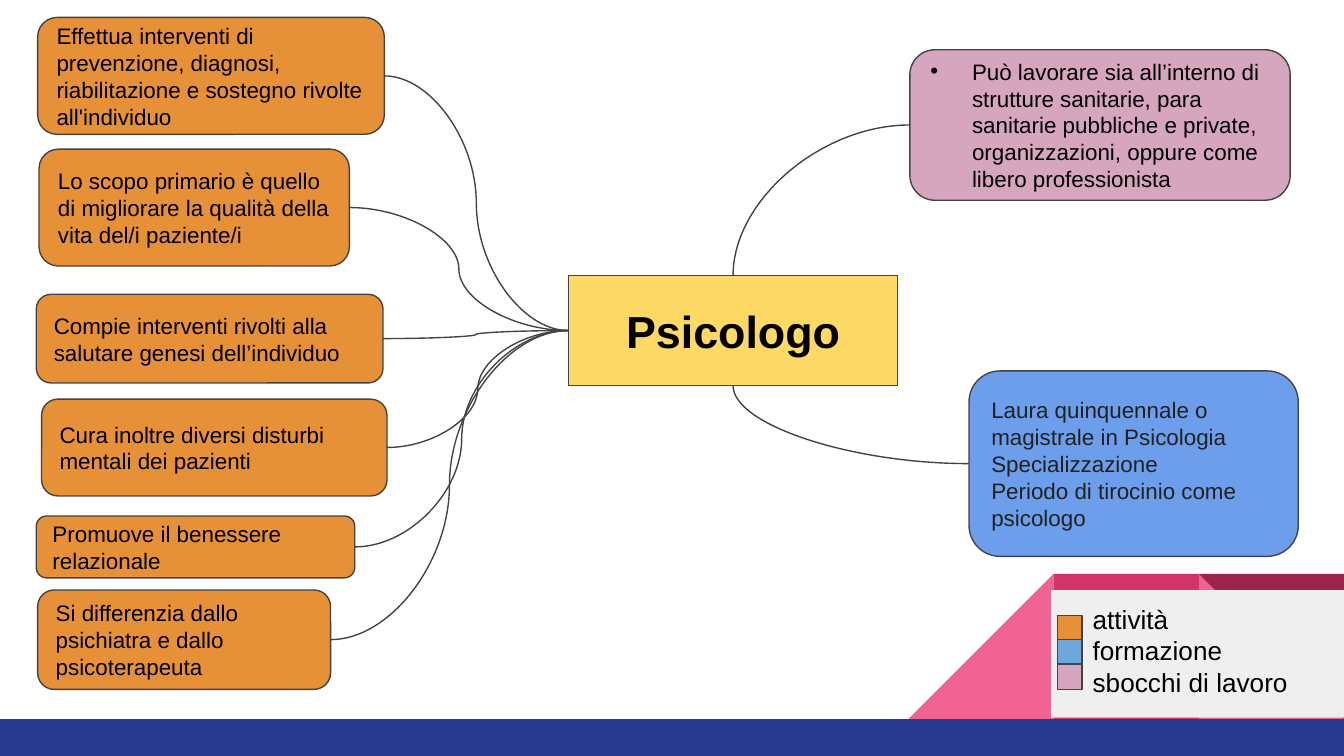
import pptx
import pptx.dml.color
import pptx.enum.shapes
import pptx.enum.text
import pptx.oxml
import pptx.oxml.ns
import pptx.util

Inches = pptx.util.Inches
Pt = pptx.util.Pt
SHAPE = pptx.enum.shapes.MSO_SHAPE
ANCHOR = pptx.enum.text.MSO_ANCHOR
ALIGN = pptx.enum.text.PP_ALIGN

COLORS = {
    "activity": "E69138",
    "outlets": "D5A6BD",
    "training": "6D9EEB",
    "training_key": "6FA8DC",
    "topic": "FFD966",
    "outline": "434343",
    "text": "000000",
    "soft_text": "212121",
    "legend": "EFEFEF",
    "footer": "2A3990",
    "pink": "F06292",
    "magenta": "D23369",
    "wine": "9C254D",
}
TOP, LEFT, BOTTOM, RIGHT = range(4)

ACTIVITIES = [
    ("Effettua interventi di prevenzione, diagnosi, riabilitazione e sostegno "
     "rivolte all'individuo", (0.28, 0.13, 2.58, 0.87)),
    ("Lo scopo primario è quello di migliorare la qualità della vita del/i paziente/i",
     (0.29, 1.11, 2.31, 0.87)),
    ("Compie interventi rivolti alla salutare genesi dell’individuo",
     (0.27, 2.19, 2.58, 0.66)),
    ("Cura inoltre diversi disturbi mentali dei pazienti", (0.31, 2.97, 2.57, 0.72)),
    ("Promuove il benessere relazionale", (0.27, 3.84, 2.37, 0.46)),
    ("Si differenzia dallo psichiatra e dallo psicoterapeuta", (0.28, 4.39, 2.18, 0.74)),
]
OUTLETS = ("Può lavorare sia all’interno di strutture sanitarie, para sanitarie "
           "pubbliche e private, organizzazioni, oppure come libero professionista")
TRAINING = ["Laura quinquennale o magistrale in Psicologia", "Specializzazione",
            "Periodo di tirocinio come psicologo"]
LEGEND = ["attività", "formazione", "sbocchi di lavoro"]


def rgb(name):
    return pptx.dml.color.RGBColor.from_string(COLORS[name])


def paint(shape, fill, outlined=True):
    shape.fill.solid()
    shape.fill.fore_color.rgb = rgb(fill)
    if outlined:
        shape.line.color.rgb = rgb("outline")
        shape.line.width = Pt(0.75)
    else:
        shape.line.fill.background()


def add_block(slide, kind, box, fill, outlined=True):
    block = slide.shapes.add_shape(kind, *map(Inches, box))
    block.shadow.inherit = False
    paint(block, fill, outlined)
    return block


def write(shape, lines, size=12, color="text", bold=False, align=ALIGN.LEFT,
          anchor=ANCHOR.MIDDLE):
    frame = shape.text_frame
    frame.word_wrap = True
    frame.auto_size = pptx.enum.text.MSO_AUTO_SIZE.NONE
    frame.vertical_anchor = anchor
    frame.margin_left = frame.margin_right = Inches(0.1)
    frame.margin_top = frame.margin_bottom = Inches(0.1)
    for number, line in enumerate(lines):
        paragraph = frame.add_paragraph() if number else frame.paragraphs[0]
        paragraph.alignment = align
        paragraph.space_before = Pt(0)
        run = paragraph.add_run()
        run.text = line
        run.font.name = "Arial"
        run.font.size = Pt(size)
        run.font.bold = bold
        run.font.color.rgb = rgb(color)


def set_list_style(paragraph, margin, indent, bullet=None):
    properties = paragraph._p.get_or_add_pPr()
    properties.set("marL", str(Inches(margin)))
    properties.set("indent", str(Inches(indent)))
    marks = ['buFont %s typeface="Arial"', f'buChar %s char="{bullet}"'] if bullet else ["buNone %s"]
    for mark in marks:
        properties.append(pptx.oxml.parse_xml(
            "<a:" + mark % pptx.oxml.ns.nsdecls("a") + "/>"))


def fill_placeholder(slide, placeholder, box, fill, outlined=True):
    """Place a placeholder in front of everything drawn so far."""
    placeholder.left, placeholder.top, placeholder.width, placeholder.height = map(Inches, box)
    paint(placeholder, fill, outlined)
    slide.shapes._spTree.append(placeholder._element)
    return placeholder


def add_card(slide, box, fill, lines, color="text"):
    card = add_block(slide, SHAPE.ROUNDED_RECTANGLE, box, fill)
    write(card, lines, color=color)
    return card


def add_curve(slide, start, start_site, end, end_site, quarter=False):
    """Join two shapes; a quarter curve leaves sideways and arrives vertically."""
    curve = slide.shapes.add_connector(
        pptx.enum.shapes.MSO_CONNECTOR.CURVE, 0, 0, 0, 0)
    curve.begin_connect(start, start_site)
    curve.end_connect(end, end_site)
    curve.line.color.rgb = rgb("outline")
    curve.line.width = Pt(0.75)
    properties = curve._element.spPr
    if quarter:
        properties.find(pptx.oxml.ns.qn("a:prstGeom")).set("prst", "curvedConnector2")
    properties.append(pptx.oxml.parse_xml(
        "<a:effectLst %s/>" % pptx.oxml.ns.nsdecls("a")))


def add_backdrop(slide):
    side, top = 1.08, 4.27
    left, middle, right = (10 - side * count for count in (3, 2, 1))
    add_block(slide, SHAPE.RIGHT_TRIANGLE, (right, top, side, side), "pink", False)
    slope = add_block(slide, SHAPE.RIGHT_TRIANGLE, (left, top, side, side), "pink", False)
    slope._element.spPr.xfrm.set("flipH", "1")
    add_block(slide, SHAPE.RECTANGLE, (middle, top, side, side), "magenta", False)
    corner = add_block(slide, SHAPE.RIGHT_TRIANGLE, (right, top, side, side), "wine", False)
    corner.rotation = 180
    add_block(slide, SHAPE.RECTANGLE, (0, 5.35, 10, 0.28), "footer", False)


def add_legend(slide):
    legend = fill_placeholder(slide, slide.placeholders[1], (7.82, 4.39, 2.18, 0.95),
                              "legend", False)
    write(legend, LEGEND, size=14, anchor=ANCHOR.TOP)
    for paragraph in legend.text_frame.paragraphs:
        set_list_style(paragraph, 0.21, 0)
    for row, fill in enumerate(("activity", "training_key", "outlets")):
        add_block(slide, SHAPE.RECTANGLE, (7.87, 4.58 + 0.18 * row, 0.18, 0.19), fill)


def main():
    deck = pptx.Presentation()
    deck.slide_width, deck.slide_height = Inches(10), Inches(10 * 9 / 16)
    slide = deck.slides.add_slide(deck.slide_layouts[1])
    add_backdrop(slide)

    topic = fill_placeholder(slide, slide.shapes.title, (4.23, 2.05, 2.45, 0.82), "topic")
    write(topic, ["Psicologo"], size=24, bold=True, align=ALIGN.CENTER)

    activities = [add_card(slide, box, "activity", [text]) for text, box in ACTIVITIES]
    outlets = add_card(slide, (6.77, 0.37, 2.83, 1.12), "outlets", [OUTLETS])
    set_list_style(outlets.text_frame.paragraphs[0], 0.31, -0.31, "•")
    training = add_card(slide, (7.21, 2.76, 2.45, 1.38), "training", TRAINING, "soft_text")

    add_curve(slide, outlets, LEFT, topic, TOP, quarter=True)
    add_curve(slide, training, LEFT, topic, BOTTOM, quarter=True)
    for activity in activities:
        add_curve(slide, topic, LEFT, activity, RIGHT)

    add_legend(slide)
    deck.save("out.pptx")


if __name__ == "__main__":
    main()
